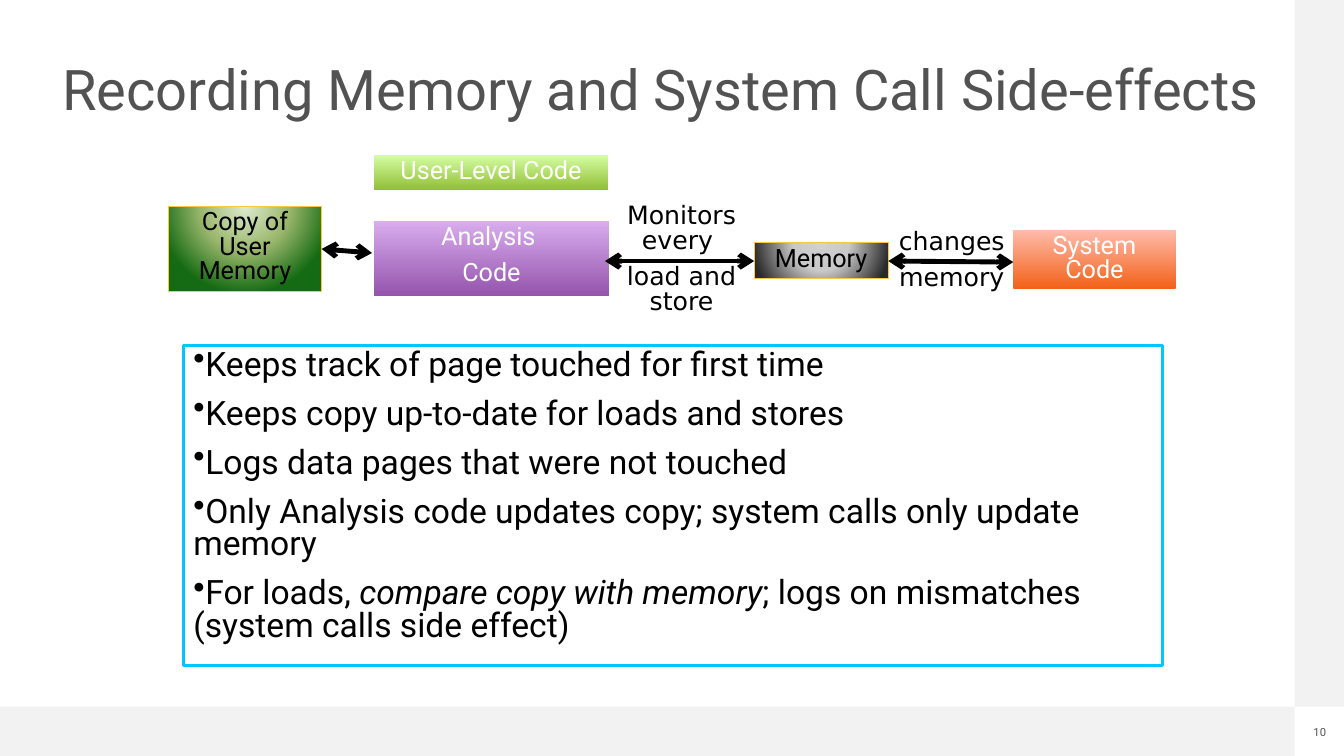
"""Build the slide on recording memory and system call side-effects."""
from lxml import etree
from pptx import Presentation
from pptx.dml.color import RGBColor
from pptx.enum import shapes, text
from pptx.oxml import parse_xml
from pptx.oxml.ns import nsdecls, qn
from pptx.util import Inches, Pt

BLACK = RGBColor(0, 0, 0)
WHITE = RGBColor(255, 255, 255)
GREY = RGBColor(0x52, 0x52, 0x52)
PALE = RGBColor(0xF2, 0xF2, 0xF2)
GOLD = RGBColor(0xF5, 0xC9, 0x45)
CYAN = RGBColor(0x00, 0xC7, 0xFD)
UP = '<a:lin ang="16200000" scaled="0"/>'
ROUND = '<a:path path="circle"><a:fillToRect l="50000" t="{}" r="50000" b="{}"/></a:path>'


def write(frame, lines, size=18, color=BLACK, font="Roboto", align="CENTER",
          space=0.8, bullet=False, inset=None, wrap=True):
    """Fill a text frame; asterisks in a line enclose italics."""
    frame.word_wrap = wrap
    frame.vertical_anchor = text.MSO_ANCHOR.TOP
    if inset is not None:
        frame.margin_left = frame.margin_right = Inches(inset)
        frame.margin_top = frame.margin_bottom = Inches(inset)
    for i, line in enumerate(lines):
        para = frame.add_paragraph() if i else frame.paragraphs[0]
        if bullet:
            mark = etree.SubElement(para._p.get_or_add_pPr(), qn("a:buChar"))
            mark.set("char", "•")
        para.alignment = text.PP_ALIGN[align]
        para.line_spacing = space
        para.space_before = Pt(size / 2 if i else 0)
        for j, part in enumerate(line.split("*")):
            run = para.add_run()
            run.text = part
            run.font.name, run.font.size = font, Pt(size)
            run.font.color.rgb = color
            run.font.italic = j % 2 == 1


def box(place, fill=None, edge=None, width=0.75, stops=(), shade=UP):
    """Add a rectangle with a solid or graded fill."""
    rect = slide.shapes.add_shape(shapes.MSO_SHAPE.RECTANGLE, *map(Inches, place))
    rect.shadow.inherit = False
    if stops:
        items = "".join(f'<a:gs pos="{pos * 1000}"><a:srgbClr val="{hue}"/></a:gs>'
                        for pos, hue in stops)
        rect._element.spPr.find(qn("a:prstGeom")).addnext(parse_xml(
            f'<a:gradFill {nsdecls("a")} rotWithShape="1"><a:gsLst>{items}</a:gsLst>{shade}</a:gradFill>'))
    else:
        rect.fill.solid()
        rect.fill.fore_color.rgb = fill
    if edge is None:
        rect.line.fill.background()
    else:
        rect.line.color.rgb = edge
        rect.line.width = Pt(width)
    return rect.text_frame


deck = Presentation()
deck.slide_width, deck.slide_height = Inches(13.33), Inches(7.5)
slide = deck.slides.add_slide(deck.slide_layouts[5])

box((0, 7.01, 12.84, 0.49), PALE)
box((12.84, 0, 0.49, 7.01), PALE)

title = slide.shapes.title
title.left, title.top, title.width, title.height = map(Inches, (0.62, 0.62, 12.04, 1.04))
write(title.text_frame, ["Recording Memory and System Call Side-effects"],
      size=40, color=GREY, align="LEFT", space=0.9, inset=0)

blocks = [
    ((7.48, 2.41, 1.33, 0.35), ["Memory"], BLACK, GOLD,
     [(0, "D1D1D1"), (40, "C9C9C9"), (100, "292929")], ROUND.format(-80000, 180000)),
    ((10.05, 2.28, 1.61, 0.59), ["System Code"], WHITE, None,
     [(0, "F26117"), (100, "FFBCAC")], UP),
    ((3.71, 1.54, 2.32, 0.35), ["User-Level Code"], WHITE, None,
     [(0, "90BE36"), (100, "D4FDA0")], UP),
    ((3.71, 2.19, 2.33, 0.75), ["Analysis ", "Code"], WHITE, None,
     [(0, "9453AC"), (100, "D9ADEE")], UP),
    ((1.67, 2.05, 1.52, 0.84), ["Copy of User Memory"], BLACK, GOLD,
     [(0, "DDEBCF"), (50, "9CB86E"), (100, "156B13")], ROUND.format(0, 100000)),
]
for place, lines, color, edge, stops, shade in blocks:
    write(box(place, edge=edge, stops=stops, shade=shade), lines, color=color)

for ends in [(6, 2.59, 7.48, 2.59), (3.19, 2.47, 3.69, 2.51), (10.05, 2.6, 8.81, 2.59)]:
    link = slide.shapes.add_connector(shapes.MSO_CONNECTOR.STRAIGHT, *map(Inches, ends))
    link.line.color.rgb = BLACK
    link.line.width = Pt(3.5)
    for tip in ("a:headEnd", "a:tailEnd"):
        etree.SubElement(link.line._get_or_add_ln(), qn(tip)).set("type", "arrow")
    etree.SubElement(link._element.spPr, qn("a:effectLst"))

notes = [
    ((6.01, 1.99, 1.5, 1.22), ["Monitors every ", "load and store"], {"font": "DejaVu Sans"}),
    ((8.69, 2.24, 1.5, 0.74), ["changes", "memory"], {"font": "DejaVu Sans"}),
    ((13.02, 7.2, 0.14, 0.13), ["10"],
     {"size": 8, "color": GREY, "space": 1.0, "inset": 0, "wrap": False}),
]
for place, lines, form in notes:
    write(slide.shapes.add_textbox(*map(Inches, place)).text_frame, lines, **form)

points = [
    "Keeps track of page touched for first time",
    "Keeps copy up-to-date for loads and stores",
    "Logs data pages that were not touched",
    "Only Analysis code updates copy; system calls only update memory",
    "For loads, *compare copy with memory*; logs on mismatches (system calls side effect)",
]
write(box((1.82, 3.43, 9.71, 3.17), WHITE, CYAN, 2), points,
      size=24, align="LEFT", bullet=True)

deck.save("out.pptx")
